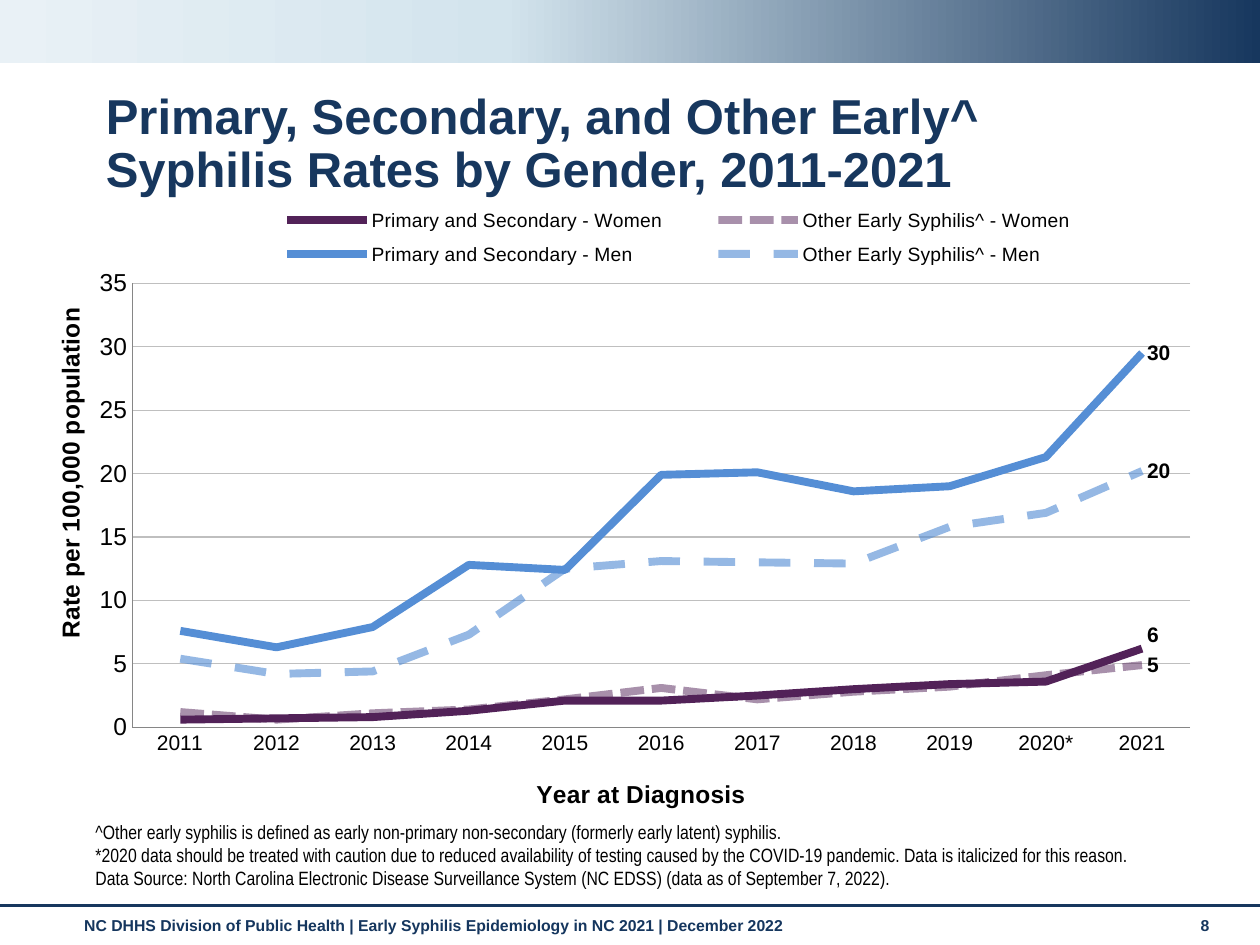
"""Build the slide on early syphilis rates by gender, 2011-2021."""
import copy
import lxml.etree
import pptx
import pptx.chart.data
import pptx.dml.color
import pptx.enum.chart
import pptx.enum.dml
import pptx.enum.shapes
import pptx.enum.text
import pptx.oxml.ns
import pptx.util

Inches = pptx.util.Inches
qn = pptx.oxml.ns.qn
Dash = pptx.enum.dml.MSO_LINE
Anchor = pptx.enum.text.MSO_ANCHOR

THEME = {
    "navy": "17375E", "footer": "15365E", "black": "000000", "grid": "BFBFBF",
    "axis": "868686", "women": "522258", "men": "558ED5",
    "font": "Arial", "narrow": "Arial Narrow",
    "title": 28, "axis_title": 14, "value": 14, "category": 12, "label": 12,
    "legend": 11, "note": 11, "small": 9,
}
TITLE = "Primary, Secondary, and Other Early^ Syphilis Rates by Gender, 2011-2021"
NOTES = [
    "^Other early syphilis is defined as early non-primary non-secondary (formerly early latent) syphilis.",
    "*2020 data should be treated with caution due to reduced availability of testing caused by the "
    "COVID-19 pandemic. Data is italicized for this reason.",
    "Data Source: North Carolina Electronic Disease Surveillance System (NC EDSS) (data as of September 7, 2022).",
]
FOOTER = "NC DHHS Division of Public Health | Early Syphilis Epidemiology in NC 2021 | December 2022"
PAGE = "8"
BAND = [(0, "17375E"), (0.6, "D3E4ED"), (1, "E9F1F6")]
YEARS = [str(year) for year in range(2011, 2020)] + ["2020*", "2021"]
SERIES = [
    ("Primary and Secondary - Women", "women", None, 100,
     [0.6, 0.7, 0.8, 1.3, 2.1, 2.1, 2.5, 3, 3.4, 3.6, 6.2]),
    ("Other Early Syphilis^ - Women", "women", Dash.SQUARE_DOT, 50,
     [1.2, 0.6, 1.1, 1.4, 2.2, 3.1, 2.2, 2.8, 3.2, 4.1, 4.9]),
    ("Primary and Secondary - Men", "men", None, 100,
     [7.6, 6.3, 7.9, 12.8, 12.4, 19.9, 20.1, 18.6, 19, 21.3, 29.5]),
    ("Other Early Syphilis^ - Men", "men", Dash.DASH, 62,
     [5.4, 4.2, 4.4, 7.3, 12.5, 13.1, 13, 12.9, 15.8, 16.9, 20.2]),
]


def color(name):
    return pptx.dml.color.RGBColor.from_string(THEME.get(name, name))


def style(font, size, fill="black", bold=False, face="font"):
    font.name = THEME[face]
    font.size = pptx.util.Pt(THEME[size])
    font.bold = bold
    font.color.rgb = color(fill)


def write(shape, box, lines, anchor, **look):
    shape.left, shape.top, shape.width, shape.height = map(Inches, box)
    frame = shape.text_frame
    frame.text = "\n".join(lines)
    frame.word_wrap = True
    frame.auto_size = pptx.enum.text.MSO_AUTO_SIZE.NONE
    frame.vertical_anchor = anchor
    for paragraph in frame.paragraphs:
        paragraph.alignment = pptx.enum.text.PP_ALIGN.LEFT
        for run in paragraph.runs:
            style(run.font, **look)


def add_text(slide, box, lines, anchor=Anchor.TOP, **look):
    write(slide.shapes.add_textbox(*map(Inches, box)), box, lines, anchor, **look)


def place(element, index, inner=False, edge=True, **parts):
    for old in element.findall(qn("c:layout")):
        element.remove(old)
    layout = lxml.etree.Element(qn("c:layout"))
    manual = lxml.etree.SubElement(layout, qn("c:manualLayout"))
    values = [("layoutTarget", "inner")] if inner else []
    values += [("xMode", "edge"), ("yMode", "edge")] if edge else []
    for tag, value in values + list(parts.items()):
        lxml.etree.SubElement(manual, qn("c:" + tag)).set("val", str(value))
    element.insert(index, layout)


def add_band(slide):
    band = slide.shapes.add_shape(
        pptx.enum.shapes.MSO_SHAPE.RECTANGLE, 0, 0, Inches(10), Inches(0.5))
    band.shadow.inherit = False
    band.line.fill.background()
    band.fill.gradient()
    band.fill.gradient_angle = 180
    stop_list = band.fill._fill._gradFill.gsLst
    stop_list.append(copy.deepcopy(stop_list[-1]))
    for stop, (position, fill) in zip(band.fill.gradient_stops, BAND):
        stop.position = position
        stop.color.rgb = color(fill)


def add_rule(slide):
    rule = slide.shapes.add_connector(
        pptx.enum.shapes.MSO_CONNECTOR.STRAIGHT, 0, Inches(7.19), Inches(10), Inches(7.19))
    rule.line.color.rgb = color("navy")
    rule.line.width = pptx.util.Pt(1.75)
    lxml.etree.SubElement(rule._element.spPr, qn("a:effectLst"))


def style_axis(axis, title, size, x, y):
    axis.axis_title.text_frame.text = title
    style(axis.axis_title.text_frame.paragraphs[0].runs[0].font, "axis_title", bold=True)
    place(axis.axis_title._element, 1, x=x, y=y)
    style(axis.tick_labels.font, size)
    axis.major_tick_mark = axis.minor_tick_mark = pptx.enum.chart.XL_TICK_MARK.NONE
    axis.format.line.color.rgb = color("axis")
    axis.format.line.width = pptx.util.Pt(0.75)


def style_series(series, fill, dash, opacity):
    series.smooth = False
    series.marker.style = pptx.enum.chart.XL_MARKER_STYLE.NONE
    line = series.format.line
    line.color.rgb = color(fill)
    line.width = pptx.util.Pt(4.5)
    if dash:
        line.dash_style = dash
        tint = series._element.spPr.find(".//" + qn("a:srgbClr"))
        lxml.etree.SubElement(tint, qn("a:alpha")).set("val", str(opacity * 1000))
    label = series.points[len(YEARS) - 1].data_label
    style(label.font, "label", bold=True)
    label.position = pptx.enum.chart.XL_LABEL_POSITION.RIGHT
    series.data_labels.show_value = False


def add_chart(slide):
    data = pptx.chart.data.CategoryChartData(number_format="0")
    data.categories = YEARS
    for name, *_, values in SERIES:
        data.add_series(name, values)
    chart = slide.shapes.add_chart(
        pptx.enum.chart.XL_CHART_TYPE.LINE, *map(Inches, (0.21, 1.46, 9.33, 5.26)), data).chart
    chart.has_title = False
    chart.font.name = THEME["font"]
    chart.has_legend = True
    chart.legend.position = pptx.enum.chart.XL_LEGEND_POSITION.TOP
    chart.legend.include_in_layout = False
    style(chart.legend.font, "legend")
    place(chart.legend._element, 1, x=0.18, y=0.02, w=0.75, h=0.12)
    place(chart._chartSpace.chart.plotArea, 0, inner=True, x=0.09, y=0.15, w=0.9, h=0.67)
    style_axis(chart.category_axis, "Year at Diagnosis", "category", 0.43, 0.89)
    style_axis(chart.value_axis, "Rate per 100,000 population", "value", 0.02, 0.18)
    chart.value_axis.minimum_scale = 0
    chart.value_axis.maximum_scale = 35
    chart.value_axis.major_unit = 5
    grid = chart.value_axis.major_gridlines.format.line
    grid.color.rgb = color("grid")
    grid.width = pptx.util.Pt(0.75)
    plot = chart.plots[0]
    plot.vary_by_categories = False
    for series, (_, fill, dash, opacity, _) in zip(plot.series, SERIES):
        style_series(series, fill, dash, opacity)
    first_label = plot.series[0]._element.find(".//" + qn("c:dLbl"))
    place(first_label, 1, edge=False, x=0, y=-0.02)


def main():
    presentation = pptx.Presentation()
    presentation.slide_width, presentation.slide_height = Inches(10), Inches(7.5)
    slide = presentation.slides.add_slide(presentation.slide_layouts[5])
    add_band(slide)
    add_rule(slide)
    title = slide.shapes.title
    write(title, (0.74, 0.68, 8.58, 0.6), [TITLE], Anchor.TOP, size="title", fill="navy", bold=True)
    title.text_frame.paragraphs[0].line_spacing = 0.9
    add_chart(slide)
    add_text(slide, (0.66, 6.57, 8.74, 0.54), NOTES, Anchor.BOTTOM, size="note", face="narrow")
    for box, text in (((0.57, 7.22, 8.74, 0.29), FOOTER), ((9.43, 7.22, 0.44, 0.3), PAGE)):
        add_text(slide, box, [text], size="small", fill="footer", bold=True)
    presentation.save("out.pptx")


if __name__ == "__main__":
    main()
